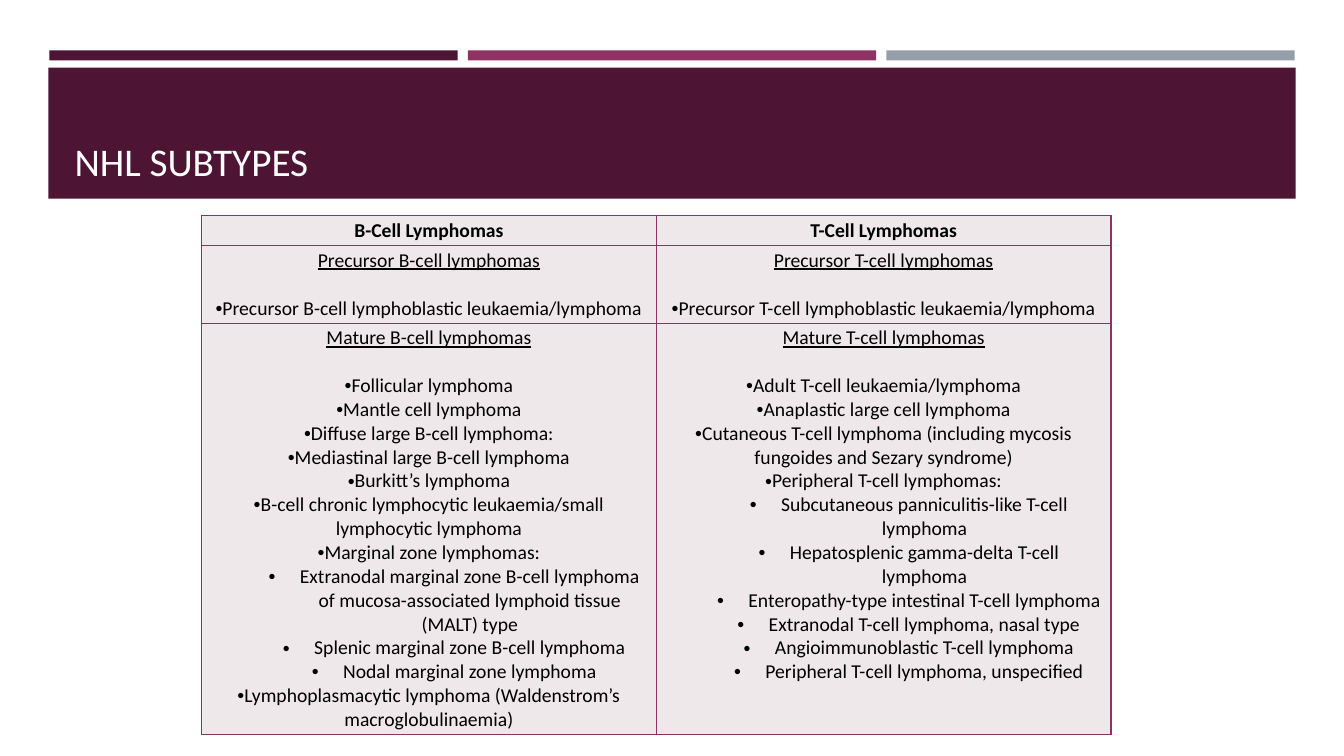
from lxml import etree
from pptx import Presentation
from pptx.dml.color import RGBColor
from pptx.enum.shapes import MSO_SHAPE
from pptx.enum.text import MSO_ANCHOR, PP_ALIGN
from pptx.oxml.ns import qn
from pptx.util import Inches, Pt

RECTANGLE = MSO_SHAPE.RECTANGLE
CENTER, LEFT = PP_ALIGN.CENTER, PP_ALIGN.LEFT
MIDDLE, TOP, BOTTOM = MSO_ANCHOR.MIDDLE, MSO_ANCHOR.TOP, MSO_ANCHOR.BOTTOM
TITLE_ONLY = 5

# Each cell: a heading, then (level, text) list items.
SUBTYPES = [
    [("B-Cell Lymphomas", []), ("T-Cell Lymphomas", [])],
    [
        ("Precursor B-cell lymphomas",
         [(0, "Precursor B-cell lymphoblastic leukaemia/lymphoma")]),
        ("Precursor T-cell lymphomas",
         [(0, "Precursor T-cell lymphoblastic leukaemia/lymphoma")]),
    ],
    [
        ("Mature B-cell lymphomas", [
            (0, "Follicular lymphoma"),
            (0, "Mantle cell lymphoma"),
            (0, "Diffuse large B-cell lymphoma:"),
            (0, "Mediastinal large B-cell lymphoma"),
            (0, "Burkitt’s lymphoma"),
            (0, "B-cell chronic lymphocytic leukaemia/small lymphocytic lymphoma"),
            (0, "Marginal zone lymphomas:"),
            (1, "Extranodal marginal zone B-cell lymphoma of "
                "mucosa-associated lymphoid tissue (MALT) type"),
            (1, "Splenic marginal zone B-cell lymphoma"),
            (1, "Nodal marginal zone lymphoma"),
            (0, "Lymphoplasmacytic lymphoma (Waldenstrom’s macroglobulinaemia)"),
        ]),
        ("Mature T-cell lymphomas", [
            (0, "Adult T-cell leukaemia/lymphoma"),
            (0, "Anaplastic large cell lymphoma"),
            (0, "Cutaneous T-cell lymphoma (including mycosis fungoides "
                "and Sezary syndrome)"),
            (0, "Peripheral T-cell lymphomas:"),
            (1, "Subcutaneous panniculitis-like T-cell lymphoma"),
            (1, "Hepatosplenic gamma-delta T-cell lymphoma"),
            (1, "Enteropathy-type intestinal T-cell lymphoma"),
            (1, "Extranodal T-cell lymphoma, nasal type"),
            (1, "Angioimmunoblastic T-cell lymphoma"),
            (1, "Peripheral T-cell lymphoma, unspecified"),
        ]),
    ],
]


def rgb(value):
    return RGBColor.from_string(value)


class SlideBuilder:
    font = "Calibri"
    plum, magenta, grey = "4D1434", "903163", "969FA7"
    cell_fill, white, black = "EEE8EA", "FFFFFF", "000000"
    text_size = 14

    def __init__(self, slide):
        self.slide = slide

    def band(self, left, top, width, height, color):
        band = self.slide.shapes.add_shape(
            RECTANGLE, Inches(left), Inches(top), Inches(width), Inches(height))
        band.shadow.inherit = False
        band.fill.solid()
        band.fill.fore_color.rgb = rgb(color)
        band.line.fill.background()

    def style(self, paragraph, size, color, bold=False, underline=False):
        for run in paragraph.runs:
            run.font.name = self.font
            run.font.size = Pt(size)
            run.font.bold = bold
            run.font.underline = underline
            run.font.color.rgb = rgb(color)

    def title(self, text, left, top, width, height):
        title = self.slide.shapes.title
        title.left, title.top = Inches(left), Inches(top)
        title.width, title.height = Inches(width), Inches(height)
        frame = title.text_frame
        frame.text = text
        frame.vertical_anchor = BOTTOM
        frame.paragraphs[0].alignment = LEFT
        self.style(frame.paragraphs[0], 28, self.white)
        # Bring the title in front of the bands.
        self.slide.shapes._spTree.append(title._element)

    def bullet(self, paragraph, level):
        paragraph.level = level
        properties = paragraph._p.get_or_add_pPr()
        margin, indent = ((0, 0), (0.81, -0.31))[level]
        properties.set("marL", str(Inches(margin)))
        properties.set("indent", str(Inches(indent)))
        etree.SubElement(properties, qn("a:buFont")).set("typeface", "Arial")
        etree.SubElement(properties, qn("a:buChar")).set("char", "•")

    def borders(self, cell):
        properties = cell._tc.get_or_add_tcPr()
        for position, side in enumerate(("a:lnL", "a:lnR", "a:lnT", "a:lnB")):
            line = etree.Element(qn(side), w=str(Pt(1)))
            fill = etree.SubElement(line, qn("a:solidFill"))
            etree.SubElement(fill, qn("a:srgbClr")).set("val", self.magenta)
            properties.insert(position, line)

    def cell(self, cell, heading, items, is_header, anchor):
        cell.margin_left = cell.margin_right = Inches(0.07)
        cell.margin_top = cell.margin_bottom = Inches(0.03)
        cell.vertical_anchor = anchor
        cell.fill.solid()
        cell.fill.fore_color.rgb = rgb(self.cell_fill)
        self.borders(cell)
        frame = cell.text_frame
        frame.text = "\n".join([heading] + [text for _, text in items])
        for paragraph in frame.paragraphs:
            paragraph.alignment = CENTER
            self.style(paragraph, self.text_size, self.black)
        first, *entries = frame.paragraphs
        self.style(first, self.text_size, self.black, is_header, not is_header)
        if items:
            first.space_after = Pt(17)
        for paragraph, (level, _) in zip(entries, items):
            self.bullet(paragraph, level)

    def table(self, rows, left, top, column_width, heights):
        columns = len(rows[0])
        table = self.slide.shapes.add_table(
            len(rows), columns, Inches(left), Inches(top),
            Inches(column_width * columns), Inches(sum(heights))).table
        table.horz_banding = False
        for column in table.columns:
            column.width = Inches(column_width)
        last = len(rows) - 1
        for r, (contents, height) in enumerate(zip(rows, heights)):
            table.rows[r].height = Inches(height)
            for c, (heading, items) in enumerate(contents):
                self.cell(table.cell(r, c), heading, items, r == 0,
                          TOP if r == last else MIDDLE)


def main():
    deck = Presentation()
    deck.slide_width, deck.slide_height = Inches(13.33), Inches(7.5)
    builder = SlideBuilder(deck.slides.add_slide(deck.slide_layouts[TITLE_ONLY]))
    for i, color in enumerate((builder.plum, builder.magenta, builder.grey)):
        builder.band(0.49 + 4.15 * i, 0.5, 4.05, 0.1, color)
    builder.band(0.48, 0.67, 12.37, 1.3, builder.plum)
    builder.title("NHL SUBTYPES", 0.64, 0.77, 12.06, 1.11)
    builder.table(SUBTYPES, 2, 2.14, 4.51, (0.29, 0.72, 3.72))
    deck.save("out.pptx")


if __name__ == "__main__":
    main()
